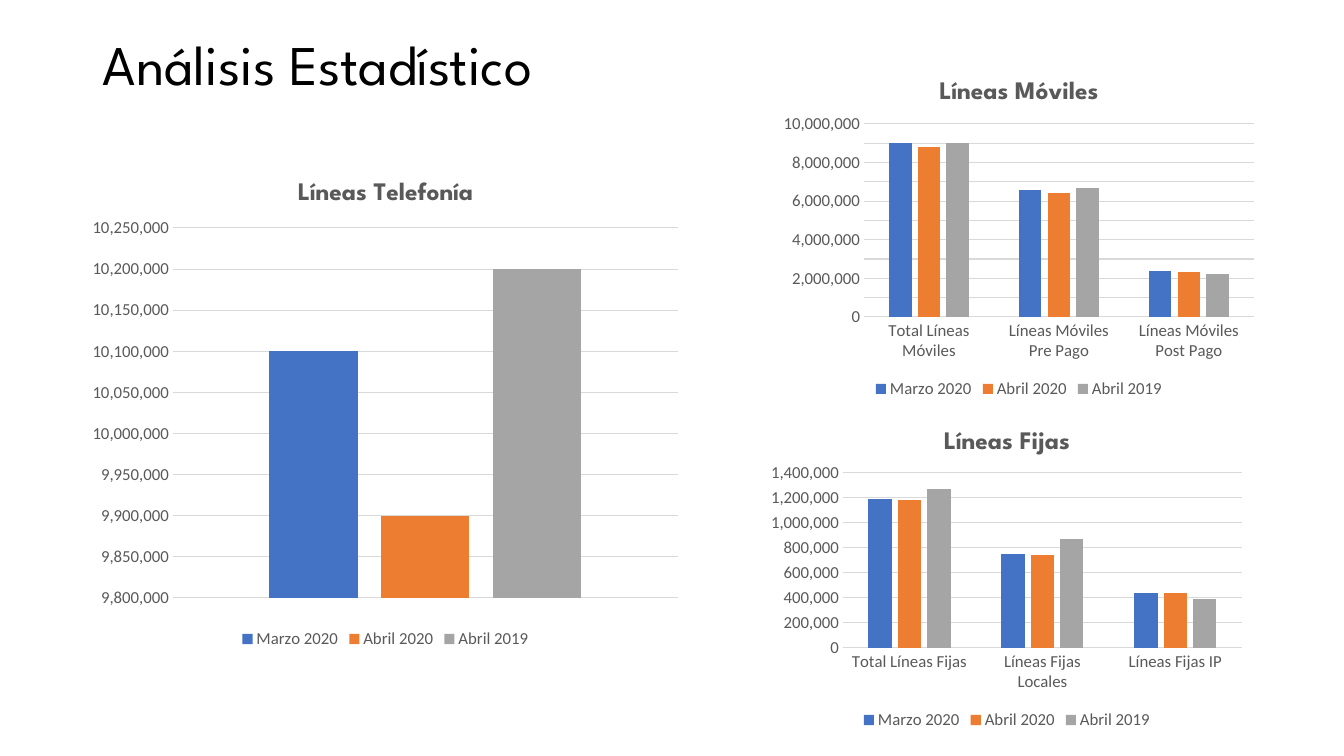
from lxml.etree import SubElement
from pptx import Presentation
from pptx.chart.data import CategoryChartData
from pptx.dml.color import RGBColor
from pptx.enum.chart import XL_CHART_TYPE, XL_LEGEND_POSITION, XL_TICK_MARK
from pptx.enum.text import MSO_ANCHOR
from pptx.oxml.ns import qn
from pptx.util import Emu, Pt

PX = 914400 / 100.8
COLORS = {"title": "000000", "text": "595959", "grid": "D9D9D9",
          "Marzo 2020": "4472C4", "Abril 2020": "ED7D31", "Abril 2019": "A5A5A5"}
MONTHS = ["Marzo 2020", "Abril 2020", "Abril 2019"]
HEAD_FONT, BODY_FONT = "League Spartan", "Calibri"


def px(n):
    return Emu(round(n * PX))


def color(name):
    return RGBColor.from_string(COLORS[name])


def style_font(font, size, name, color_name, bold=False):
    font.size, font.name, font.bold = Pt(size), name, bold
    font.color.rgb = color(color_name)


def add_title(s, box, text):
    tf = s.shapes.add_textbox(*map(px, box)).text_frame
    tf.word_wrap = True
    tf.vertical_anchor = MSO_ANCHOR.MIDDLE
    p = tf.paragraphs[0]
    p.line_spacing = 0.9
    r = p.add_run()
    r.text = text
    style_font(r.font, 40, HEAD_FONT, "title")


def place_plot(chart, box, area):
    """Fix the plot area, given in px from the chart's corner."""
    plot_area = chart._chartSpace.find(".//" + qn("c:plotArea"))
    for old in plot_area.findall(qn("c:layout")):
        plot_area.remove(old)
    layout = SubElement(plot_area, qn("c:layout"))
    plot_area.insert(0, layout)
    manual = SubElement(layout, qn("c:manualLayout"))
    width, height = box[2:]
    x, y, w, h = area
    for tag, val in (("layoutTarget", "inner"), ("xMode", "edge"), ("yMode", "edge"),
                     ("x", x / width), ("y", y / height),
                     ("w", w / width), ("h", h / height)):
        SubElement(manual, qn("c:" + tag)).set("val", str(val))


def add_lines_chart(s, box, area, title, cats, rows, low, high, step, show_cats=True):
    """Clustered columns, one row of values per month."""
    data = CategoryChartData(number_format="#,##0")
    data.categories = cats
    for month, values in zip(MONTHS, rows):
        data.add_series(month, values)
    chart = s.shapes.add_chart(XL_CHART_TYPE.COLUMN_CLUSTERED, *map(px, box), data).chart
    style_font(chart.font, 12, BODY_FONT, "text")
    place_plot(chart, box, area)

    # Title and legend
    chart.has_title = True
    r = chart.chart_title.text_frame.paragraphs[0].add_run()
    r.text = title
    style_font(r.font, 18, HEAD_FONT, "text", bold=True)
    chart.chart_title.include_in_layout = False
    chart.has_legend = True
    chart.legend.position = XL_LEGEND_POSITION.BOTTOM
    chart.legend.include_in_layout = False
    style_font(chart.legend.font, 12, BODY_FONT, "text")

    # Axes
    cat_axis, val_axis = chart.category_axis, chart.value_axis
    for axis in (cat_axis, val_axis):
        axis.major_tick_mark = axis.minor_tick_mark = XL_TICK_MARK.NONE
        style_font(axis.tick_labels.font, 12, BODY_FONT, "text")
    cat_axis.visible = show_cats
    val_axis.minimum_scale, val_axis.maximum_scale = low, high
    val_axis.major_unit = step
    val_axis.tick_labels.number_format = "#,##0"
    val_axis.tick_labels.number_format_is_linked = False
    val_axis.format.line.fill.background()
    for line in (cat_axis.format.line, val_axis.major_gridlines.format.line):
        line.color.rgb = color("grid")
        line.width = Pt(0.75)

    # Columns
    plot = chart.plots[0]
    plot.gap_width, plot.overlap = 219, -27
    plot.vary_by_categories = False
    for series in plot.series:
        series.format.fill.solid()
        series.format.fill.fore_color.rgb = color(series.name)


def main():
    prs = Presentation()
    prs.slide_width, prs.slide_height = px(1344), px(756)
    s = prs.slides.add_slide(prs.slide_layouts[6])
    add_title(s, (93, 21, 621, 93), "Análisis Estadístico")
    add_lines_chart(s, (774, 62, 490, 341), (90, 62, 390, 193), "Líneas Móviles",
                    ["Total Líneas Móviles", "Líneas Móviles Pre Pago",
                     "Líneas Móviles Post Pago"],
                    [(9000000, 6600000, 2400000),
                     (8800000, 6400000, 2300000),
                     (9000000, 6700000, 2200000)], 0, 10000000, 1000000)
    add_lines_chart(s, (80, 160, 611, 493), (93, 68, 505, 370), "Líneas Telefonía", ["1"],
                    [(10100000,), (9900000,), (10200000,)],
                    9800000, 10250000, 50000, show_cats=False)
    add_lines_chart(s, (762, 412, 490, 322), (81, 61, 399, 175), "Líneas Fijas",
                    ["Total Líneas Fijas", "Líneas Fijas Locales", "Líneas Fijas IP"],
                    [(1190000, 750000, 440000),
                     (1180000, 740000, 440000),
                     (1270000, 870000, 390000)], 0, 1400000, 200000)
    prs.save("out.pptx")


if __name__ == "__main__":
    main()
